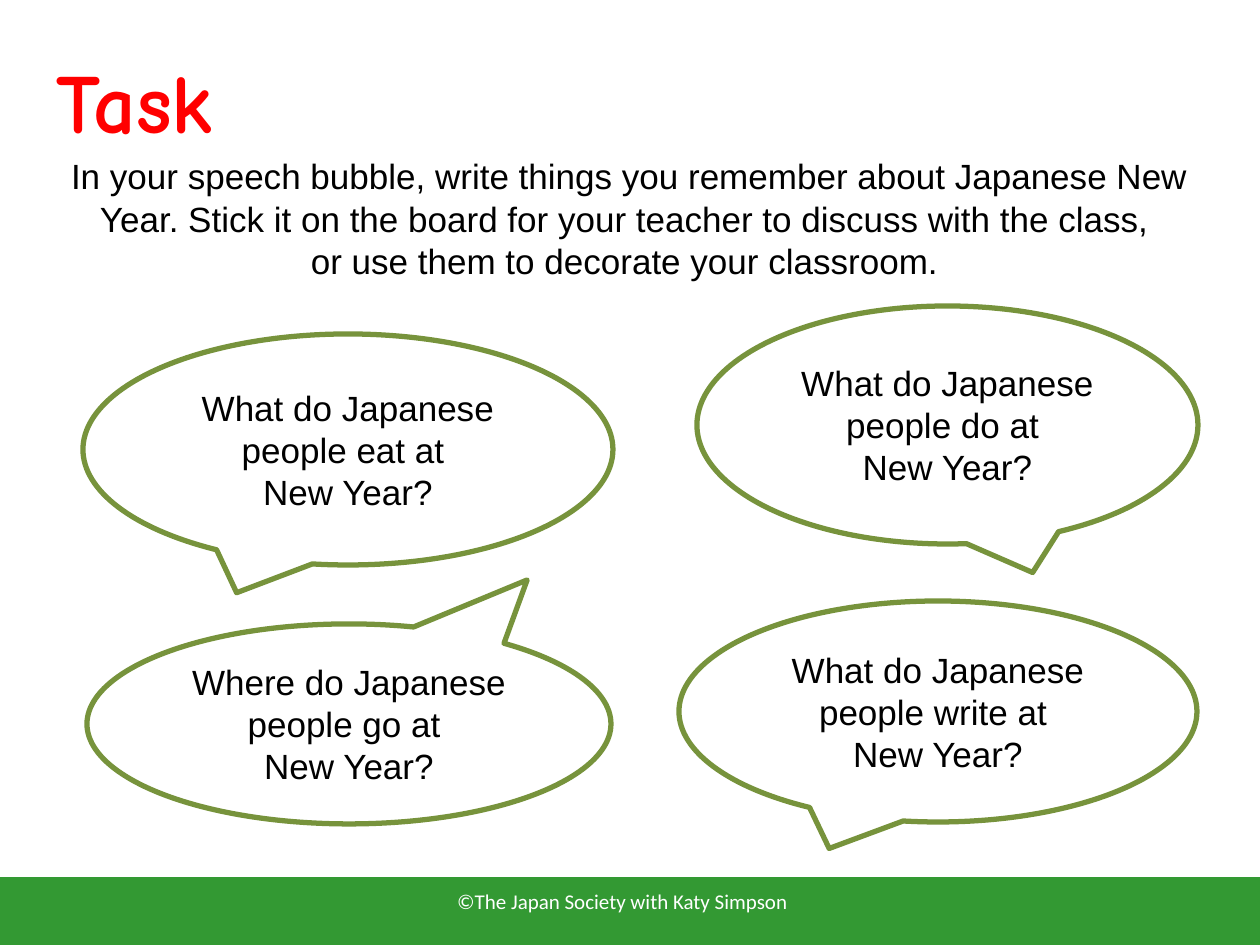
from pptx import Presentation
from pptx.dml.color import RGBColor
from pptx.enum.shapes import MSO_SHAPE
from pptx.enum.text import MSO_ANCHOR, PP_ALIGN
from pptx.util import Emu, Pt

PX_PER_INCH = 126
BLACK = RGBColor(0x00, 0x00, 0x00)
WHITE = RGBColor(0xFF, 0xFF, 0xFF)
RED = RGBColor(0xFF, 0x00, 0x00)
OLIVE = RGBColor(0x77, 0x93, 0x3C)
GREEN = RGBColor(0x33, 0x99, 0x33)

TITLE = {"name": "Comic Neue", "size": Pt(48), "bold": True}
BODY = {"name": "Arial", "size": Pt(20)}
FOOTER = {"name": "Calibri", "size": Pt(12)}

# Place in px, what people do, tail tip relative to the bubble's centre
BUBBLES = [
    ((83, 334, 530, 231), "What", "eat", (-0.21, 0.62)),
    ((697, 306, 501, 238), "What", "do", (0.17, 0.62)),
    ((87, 624, 524, 200), "Where", "go", (0.34, -0.72)),
    ((679, 601, 518, 221), "What", "write", (-0.21, 0.62)),
]


def px(length):
    return Emu(round(length * 914400 / PX_PER_INCH))


def write(box, lines, style, color, align=PP_ALIGN.CENTER, anchor=MSO_ANCHOR.MIDDLE):
    frame = box.text_frame
    frame.word_wrap = True
    frame.vertical_anchor = anchor
    for index, line in enumerate(lines):
        para = frame.add_paragraph() if index else frame.paragraphs[0]
        para.alignment = align
        span = para.add_run()
        span.text = line
        for name, value in style.items():
            setattr(span.font, name, value)
        span.font.color.rgb = color


def add_text(page, place, lines, style, color, **layout):
    box = page.shapes.add_textbox(*map(px, place))
    write(box, lines, style, color, **layout)


def add_outlined(page, kind, place, line_color, width, fill=None):
    shape = page.shapes.add_shape(kind, *map(px, place))
    shape.shadow.inherit = False
    if fill is None:
        shape.fill.background()
    else:
        shape.fill.solid()
        shape.fill.fore_color.rgb = fill
    shape.line.color.rgb = line_color
    shape.line.width = Pt(width)
    return shape


def add_bubble(page, place, question, action, tail):
    bubble = add_outlined(page, MSO_SHAPE.OVAL_CALLOUT, place, OLIVE, 3)
    for index, offset in enumerate(tail):
        bubble.adjustments[index] = offset
    lines = [f"{question} do Japanese people {action} at ", "New Year?"]
    write(bubble, lines, BODY, BLACK)


def main():
    deck = Presentation()
    deck.slide_width, deck.slide_height = px(1260), px(945)
    page = deck.slides.add_slide(deck.slide_layouts[6])

    # Footer band
    add_outlined(page, MSO_SHAPE.RECTANGLE, (0, 879, 1260, 66), GREEN, 2, GREEN)
    add_text(page, (0, 876, 1245, 50), ["©The Japan Society with Katy Simpson"], FOOTER, WHITE)

    # Heading and instructions
    add_text(page, (44, 43, 907, 115), ["Task"], TITLE, RED,
             align=PP_ALIGN.LEFT, anchor=MSO_ANCHOR.TOP)
    add_text(page, (29, 139, 1201, 158), [
        "In your speech bubble, write things you remember about Japanese New Year. "
        "Stick it on the board for your teacher to discuss with the class, ",
        "or use them to decorate your classroom. ",
    ], BODY, BLACK)

    # Speech bubbles
    for bubble in BUBBLES:
        add_bubble(page, *bubble)

    deck.save("out.pptx")


if __name__ == "__main__":
    main()
